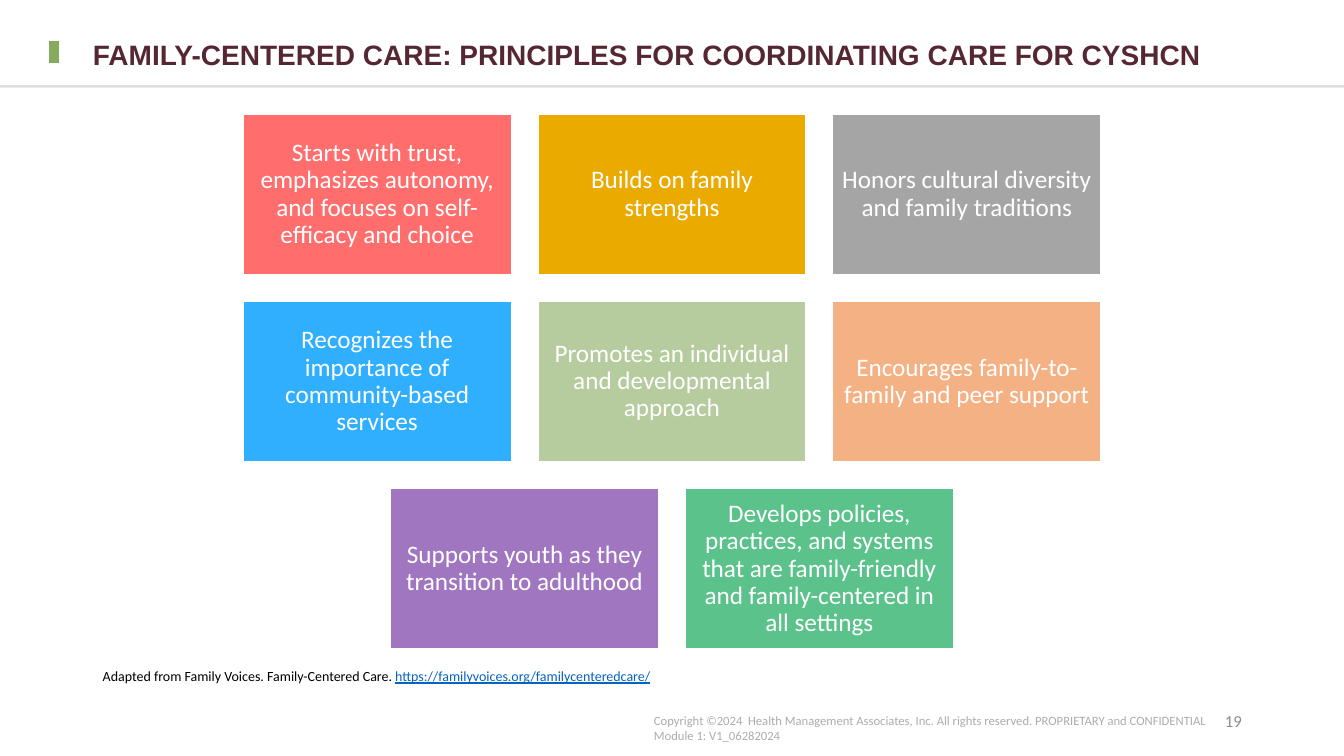
from lxml import etree
from pptx import Presentation
from pptx.dml.color import RGBColor
from pptx.enum.shapes import MSO_CONNECTOR, MSO_SHAPE
from pptx.enum.text import MSO_ANCHOR as ANCHOR, MSO_AUTO_SIZE, PP_ALIGN as ALIGN
from pptx.oxml.ns import qn
from pptx.util import Cm, Pt

SLIDE_W, SLIDE_H = 33.87, 19.05
TILE_W, TILE_H, GAP = 6.76, 4.05, 0.67

PRINCIPLES = [
    [("Starts with trust, emphasizes autonomy, and focuses on self-efficacy and choice", "FF6D6D"),
     ("Builds on family strengths", "EAAA00"),
     ("Honors cultural diversity and family traditions", "A5A5A5")],
    [("Recognizes the importance of community-based services", "30AFFF"),
     ("Promotes an individual and developmental approach", "B6CC9E"),
     ("Encourages family-to-family and peer support", "F4B183")],
    [("Supports youth as they transition to adulthood", "7030A0"),
     ("Develops policies, practices, and systems that are family-friendly "
      "and family-centered in all settings", "5BC28B")],
]
OPACITY = {"7030A0": 66}


def paint(color, value, opacity=100):
    """Set a colour from a hex string, with an opacity in percent."""
    color.rgb = RGBColor.from_string(value)
    if opacity < 100:
        clr = color._xFill.find(qn("a:srgbClr"))
        etree.SubElement(clr, qn("a:alpha"), val=str(opacity * 1000))


def write(sp, text, size=18, color="FFFFFF", font="Calibri", bold=False, align=ALIGN.LEFT,
          anchor=ANCHOR.TOP, inset=(0.25, 0.13), spacing=1.0):
    """Fill a shape with text: one paragraph a line; a run is a string or (string, colour, underline)."""
    tf = sp.text_frame
    tf.word_wrap = True
    tf.auto_size = MSO_AUTO_SIZE.NONE
    tf.vertical_anchor = anchor
    tf.margin_left = tf.margin_right = Cm(inset[0])
    tf.margin_top = tf.margin_bottom = Cm(inset[1])
    lines = [[(t, color, False)] for t in text.split("\n")] if isinstance(text, str) else [text]
    for i, runs in enumerate(lines):
        p = tf.paragraphs[0] if i == 0 else tf.add_paragraph()
        p.alignment = align
        p.line_spacing = spacing
        p.space_before = Pt(0)
        for content, run_color, underline in runs:
            r = p.add_run()
            r.text = content
            r.font.name, r.font.size, r.font.bold = font, Pt(size), bold
            r.font.underline = underline
            paint(r.font.fill_color if hasattr(r.font, "fill_color") else r.font.color, run_color)


def add_text(s, box, text, **fmt):
    write(s.shapes.add_textbox(*map(Cm, box)), text, **fmt)


def add_line(s, start, end, color, width, opacity=100):
    line = s.shapes.add_connector(MSO_CONNECTOR.STRAIGHT, *map(Cm, start + end))
    line.line.width = Pt(width)
    line.line.fill.solid()
    paint(line.line.fill.fore_color, color, opacity)
    etree.SubElement(line._element.spPr, qn("a:effectLst"))


def add_header(s, x, y, w, h):
    # Rule across the slide and green marker beside the title
    add_line(s, (0, y + 1.14), (SLIDE_W, y + 1.14), "000000", 1.75, opacity=12)
    add_line(s, (x - 0.97, y), (x - 0.97, y + 0.56), "86AB5D", 7)
    title = s.shapes.title
    title.left, title.top, title.width, title.height = map(Cm, (x, y, w, h))
    write(title, "FAMILY-CENTERED CARE: PRINCIPLES FOR COORDINATING CARE FOR CYSHCN",
          size=20, color="552733", font="Arial", bold=True, anchor=ANCHOR.MIDDLE,
          inset=(0, 0), spacing=0.9)


def add_tile(s, x, y, text, fill):
    sp = s.shapes.add_shape(MSO_SHAPE.RECTANGLE, *map(Cm, (x, y, TILE_W, TILE_H)))
    sp.shadow.inherit = False
    sp.fill.solid()
    paint(sp.fill.fore_color, fill, OPACITY.get(fill, 100))
    sp.line.width = Pt(1)
    paint(sp.line.color, "FFFFFF")
    write(sp, text, align=ALIGN.CENTER, anchor=ANCHOR.MIDDLE, inset=(0.18, 0.18), spacing=0.9)


def add_principles(s, x, y, w):
    # Each row of tiles is centred in the width
    for i, row in enumerate(PRINCIPLES):
        row_w = len(row) * (TILE_W + GAP) - GAP
        left = x + (w - row_w) / 2
        for j, (text, fill) in enumerate(row):
            add_tile(s, left + j * (TILE_W + GAP), y + i * (TILE_H + GAP), text, fill)


def add_footer(s, x, y, w):
    # Source line, copyright and slide number
    source = [("Adapted from Family Voices. Family-Centered Care. ", "000000", False),
              ("https://familyvoices.org/familycenteredcare/", "0563C1", True)]
    add_text(s, (x, y, w, 1.02), source, size=10, anchor=ANCHOR.BOTTOM, spacing=0.9)
    add_text(s, (x + 13.89, y + 1.47, 14.58, 1.02),
             "Copyright ©2024\u00a0 Health Management Associates, Inc. All rights reserved. "
             "PROPRIETARY and CONFIDENTIAL\nModule 1: V1_06282024".replace("\u00a0", " "),
             size=9, color="AFABAB")
    add_text(s, (x + w - 7.62, y + 1.29, 7.62, 1.02), "19", size=12, color="8C8C8C",
             align=ALIGN.RIGHT, anchor=ANCHOR.MIDDLE)


def main():
    prs = Presentation()
    prs.slide_width, prs.slide_height = Cm(SLIDE_W), Cm(SLIDE_H)
    s = prs.slides.add_slide(prs.slide_layouts[5])
    add_header(s, 2.34, 1.04, 29.21, 0.76)
    add_principles(s, 0, 2.87, SLIDE_W)
    add_footer(s, 2.34, 16.36, 29.21)
    prs.save("out.pptx")


if __name__ == "__main__":
    main()
